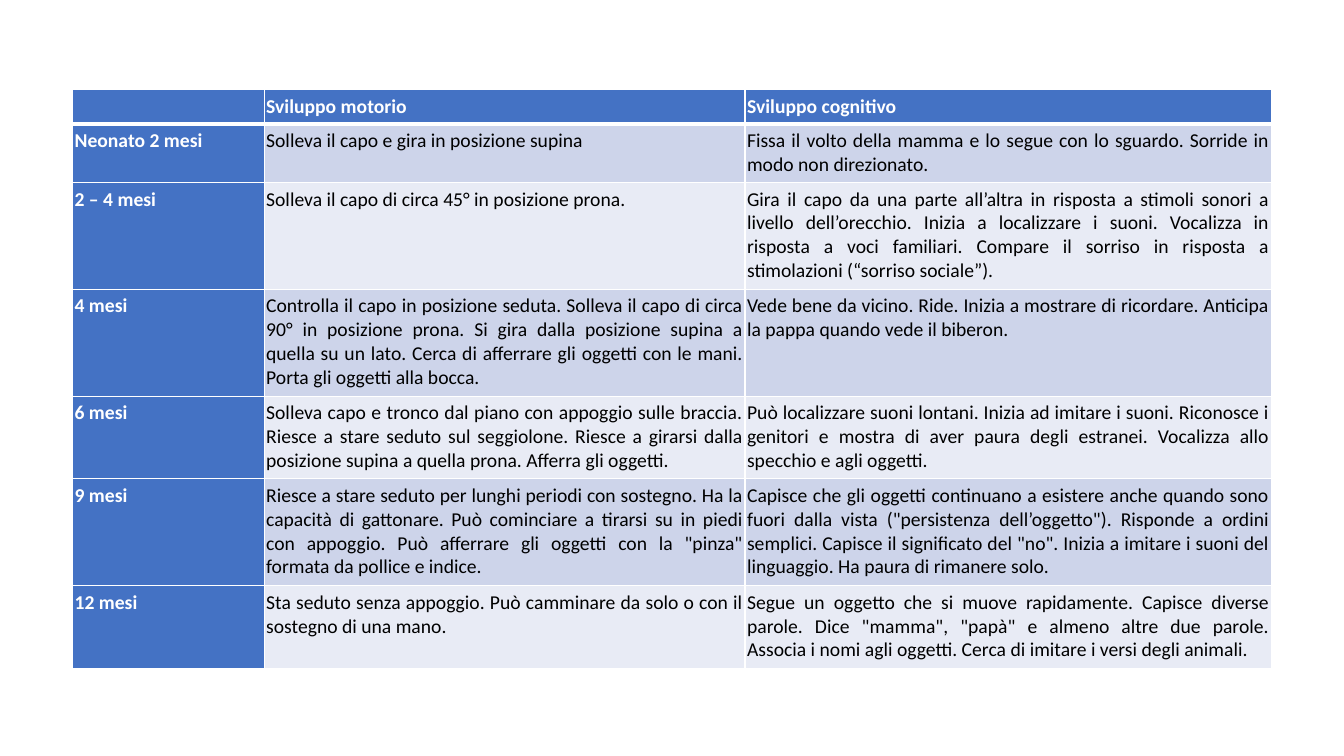
from lxml import etree
from pptx import Presentation
from pptx import util as u
from pptx.dml.color import RGBColor
from pptx.enum import text
from pptx.oxml.ns import qn

COLORS = {"header": "4472C4", "odd": "CDD4EA", "even": "E8EBF5",
          "white": "FFFFFF", "black": "000000"}
FONT, SIZE = "Calibri", 14
COL_WIDTHS = [1.9, 4.77, 5.22]
LINE_HEIGHT, V_MARGIN, H_MARGIN = 0.24, 0.05, 0.02

# Text lines in the tallest cell, then the three cells of each row
ROWS = [
    (1, "", "Sviluppo motorio", "Sviluppo cognitivo"),
    (2, "Neonato 2 mesi",
     "Solleva il capo e gira in posizione supina",
     "Fissa il volto della mamma e lo segue con lo sguardo. Sorride in modo non direzionato. "),
    (4, "2 – 4 mesi",
     "Solleva il capo di circa 45° in posizione prona. ",
     "Gira il capo da una parte all’altra in risposta a stimoli sonori a livello dell’orecchio. "
     "Inizia a localizzare i suoni. Vocalizza in risposta a voci familiari. "
     "Compare il sorriso in risposta a stimolazioni (“sorriso sociale”). "),
    (4, "4 mesi",
     "Controlla il capo in posizione seduta. Solleva il capo di circa 90° in posizione prona. "
     "Si gira dalla posizione supina a quella su un lato. "
     "Cerca di afferrare gli oggetti con le mani. Porta gli oggetti alla bocca. ",
     "Vede bene da vicino. Ride. Inizia a mostrare di ricordare. "
     "Anticipa la pappa quando vede il biberon. "),
    (3, "6 mesi",
     "Solleva capo e tronco dal piano con appoggio sulle braccia. "
     "Riesce a stare seduto sul seggiolone. "
     "Riesce a girarsi dalla posizione supina a quella prona. Afferra gli oggetti. ",
     "Può localizzare suoni lontani. Inizia ad imitare i suoni. "
     "Riconosce i genitori e mostra di aver paura degli estranei. "
     "Vocalizza allo specchio e agli oggetti. "),
    (4, "9 mesi",
     "Riesce a stare seduto per lunghi periodi con sostegno. Ha la capacità di gattonare. "
     "Può cominciare a tirarsi su in piedi con appoggio. "
     "Può afferrare gli oggetti con la \"pinza\" formata da pollice e indice. ",
     "Capisce che gli oggetti continuano a esistere anche quando sono fuori dalla vista "
     "(\"persistenza dell’oggetto\"). Risponde a ordini semplici. "
     "Capisce il significato del \"no\". Inizia a imitare i suoni del linguaggio. "
     "Ha paura di rimanere solo. "),
    (3, "12 mesi",
     "Sta seduto senza appoggio. Può camminare da solo o con il sostegno di una mano. ",
     "Segue un oggetto che si muove rapidamente. Capisce diverse parole. "
     "Dice \"mamma\", \"papà\" e almeno altre due parole. Associa i nomi agli oggetti. "
     "Cerca di imitare i versi degli animali. "),
]


def rgb(name):
    return RGBColor.from_string(COLORS[name])


def set_borders(cell, bottom):
    tc_pr = cell._tc.get_or_add_tcPr()
    for side, width in (("L", 0.96), ("R", 0.96), ("T", 0.96), ("B", bottom)):
        ln = etree.SubElement(tc_pr, qn(f"a:ln{side}"), w=str(u.Pt(width)))
        fill = etree.SubElement(ln, qn("a:solidFill"))
        etree.SubElement(fill, qn("a:srgbClr"), val=COLORS["white"])


def write_text(cell, content, align, color, bold):
    p = cell.text_frame.paragraphs[0]
    p.alignment = align
    if not content:
        # Keeps the empty cell as low as its neighbours
        etree.SubElement(p._p, qn("a:endParaRPr"), sz=str(SIZE * 100))
        return
    r = p.add_run()
    r.text = content
    r.font.name, r.font.size, r.font.bold = FONT, u.Pt(SIZE), bold
    r.font.color.rgb = rgb(color)


def style_cell(cell, row, col, content):
    heading = row == 0 or col == 0
    cell.margin_left = cell.margin_right = u.Inches(H_MARGIN)
    cell.margin_top = cell.margin_bottom = u.Inches(V_MARGIN)
    set_borders(cell, 3 if row == 0 else 0.96)
    cell.fill.solid()
    cell.fill.fore_color.rgb = rgb("header" if heading else "odd" if row % 2 else "even")
    align = text.PP_ALIGN.LEFT if col == 0 else text.PP_ALIGN.JUSTIFY
    write_text(cell, content, align, "white" if heading else "black", heading)


def add_milestones(slide, left, top):
    heights = [lines * LINE_HEIGHT + 2 * V_MARGIN for lines, *_ in ROWS]
    table = slide.shapes.add_table(
        len(ROWS), len(COL_WIDTHS), u.Inches(left), u.Inches(top),
        u.Inches(sum(COL_WIDTHS)), u.Inches(sum(heights))).table
    table.first_col = True
    for column, width in zip(table.columns, COL_WIDTHS):
        column.width = u.Inches(width)
    for i, (_, *contents) in enumerate(ROWS):
        table.rows[i].height = u.Inches(heights[i])
        for j, content in enumerate(contents):
            style_cell(table.cell(i, j), i, j, content)


def main():
    prs = Presentation()
    prs.slide_width, prs.slide_height = u.Inches(13.33), u.Inches(7.5)
    s = prs.slides.add_slide(prs.slide_layouts[6])
    # Table of milestones by age
    add_milestones(s, 0.72, 0.89)
    prs.save("out.pptx")


if __name__ == "__main__":
    main()
